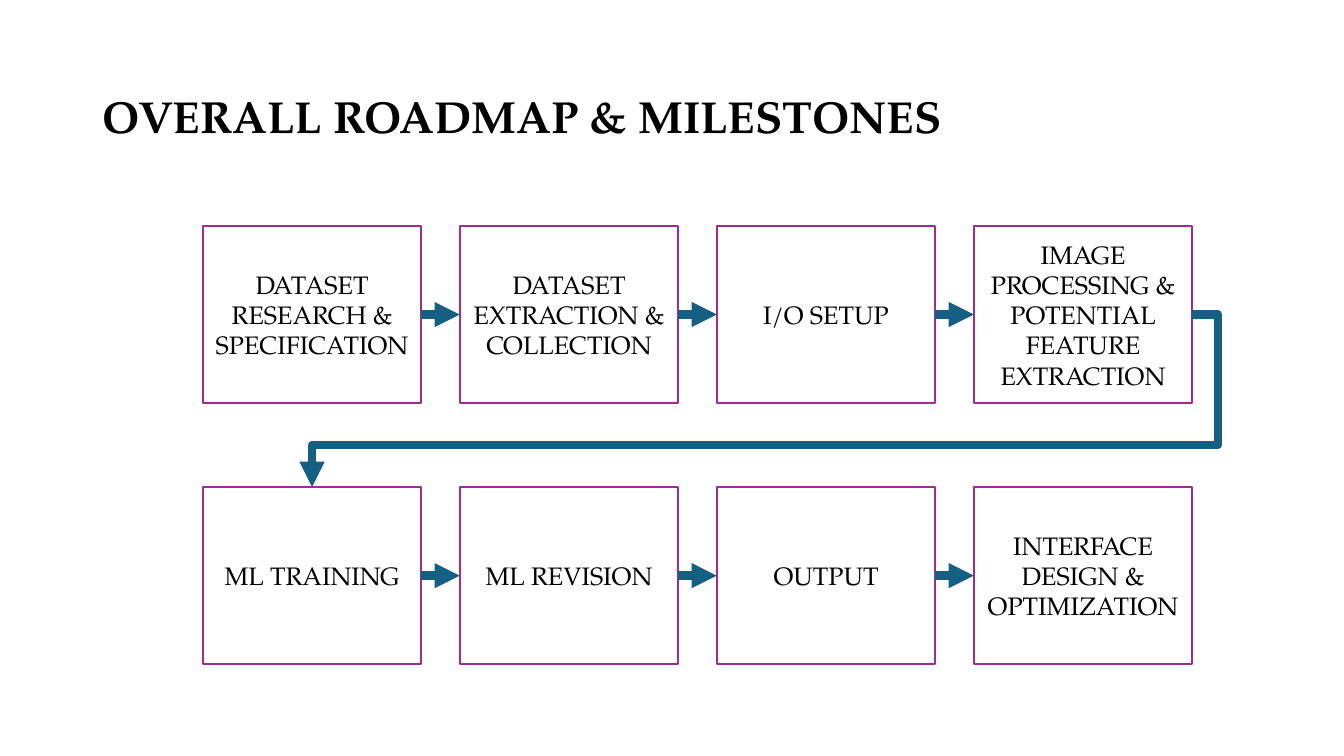
from itertools import pairwise

from lxml.etree import SubElement as Sub
from pptx import Presentation
from pptx.dml.color import RGBColor
from pptx.enum.shapes import MSO_CONNECTOR as Link, MSO_SHAPE as Form
from pptx.enum.text import MSO_ANCHOR as Anchor, MSO_AUTO_SIZE as Fit, PP_ALIGN as Align
from pptx.oxml.ns import qn
from pptx.util import Cm, Pt

FACE = "TeX Gyre Pagella"
BLACK, WHITE, PURPLE, BLUE = "000000", "FFFFFF", "A02B93", "156082"
TOP, LEFT, BOTTOM, RIGHT = range(4)  # connection sites of a rectangle
STEPS = [
    ["DATASET RESEARCH & SPECIFICATION", "DATASET EXTRACTION & COLLECTION",
     "I/O SETUP", "IMAGE PROCESSING & POTENTIAL FEATURE EXTRACTION"],
    ["ML TRAINING", "ML REVISION", "OUTPUT", "INTERFACE DESIGN & OPTIMIZATION"],
]


def color(code):
    return RGBColor.from_string(code)


def style(para, size, align, bold=False):
    para.alignment = align
    font = para.font
    font.name, font.size, font.bold = FACE, Pt(size), bold
    font.color.rgb = color(BLACK)


def add_title(slide, text, left, top, width, height):
    title = slide.shapes.title
    title.left, title.top, title.width, title.height = left, top, width, height
    frame = title.text_frame
    frame.text = text
    frame.auto_size = Fit.NONE
    frame.vertical_anchor = Anchor.MIDDLE
    para = frame.paragraphs[0]
    para.line_spacing = 1.07
    style(para, 32, Align.LEFT, bold=True)


def add_step(slide, text, left, top, width, height):
    step = slide.shapes.add_shape(Form.RECTANGLE, left, top, width, height)
    step.shadow.inherit = False
    step.fill.solid()
    step.fill.fore_color.rgb = color(WHITE)
    step.line.color.rgb = color(PURPLE)
    step.line.width = Pt(1.5)
    frame = step.text_frame
    frame.text = text
    frame.word_wrap = True
    frame.vertical_anchor = Anchor.MIDDLE
    style(frame.paragraphs[0], 18, Align.CENTER)
    return step


def add_arrow(slide, kind, start, exit, end, entry):
    """Glue an arrow from one site of a step to one site of another."""
    arrow = slide.shapes.add_connector(kind, 0, 0, 0, 0)
    arrow.begin_connect(start, exit)
    arrow.end_connect(end, entry)
    arrow.line.color.rgb = color(BLUE)
    arrow.line.width = Pt(6)
    props = arrow.element.spPr
    Sub(props.find(qn("a:ln")), qn("a:tailEnd"), type="triangle")
    Sub(props, qn("a:effectLst"))
    return arrow


def bend(arrow, *ratios):
    """Route the arrow out past its start, then back to the next row."""
    shape = arrow.element.spPr.find(qn("a:prstGeom"))
    shape.set("prst", "bentConnector4")
    guides = shape.find(qn("a:avLst"))
    for num, ratio in enumerate(ratios, 1):
        Sub(guides, qn("a:gd"), name=f"adj{num}", fmla=f"val {round(ratio * 100000)}")


def add_map(slide, left, top, width, height):
    """Fill the box with rows of steps, joined by arrows."""
    wide, high = Cm(5.51), Cm(4.47)
    across = (width - wide) / (len(STEPS[0]) - 1)
    down = (height - high) / (len(STEPS) - 1)
    rows = [
        [add_step(slide, text, round(left + col * across), round(top + row * down), wide, high)
         for col, text in enumerate(texts)]
        for row, texts in enumerate(STEPS)
    ]
    for row in rows:
        for start, end in pairwise(row):
            add_arrow(slide, Link.STRAIGHT, start, RIGHT, end, LEFT)
    for upper, lower in pairwise(rows):
        turn = add_arrow(slide, Link.ELBOW, upper[-1], RIGHT, lower[0], TOP)
        bend(turn, -0.029, 0.757)


def main():
    deck = Presentation()
    deck.slide_width, deck.slide_height = Cm(33.87), Cm(19.05)
    slide = deck.slides.add_slide(deck.slide_layouts[5])
    add_title(slide, "OVERALL ROADMAP & MILESTONES", Cm(2.34), Cm(1.02), Cm(29.21), Cm(3.68))
    add_map(slide, Cm(5.11), Cm(5.69), Cm(24.94), Cm(11.05))
    deck.save("out.pptx")


if __name__ == "__main__":
    main()
